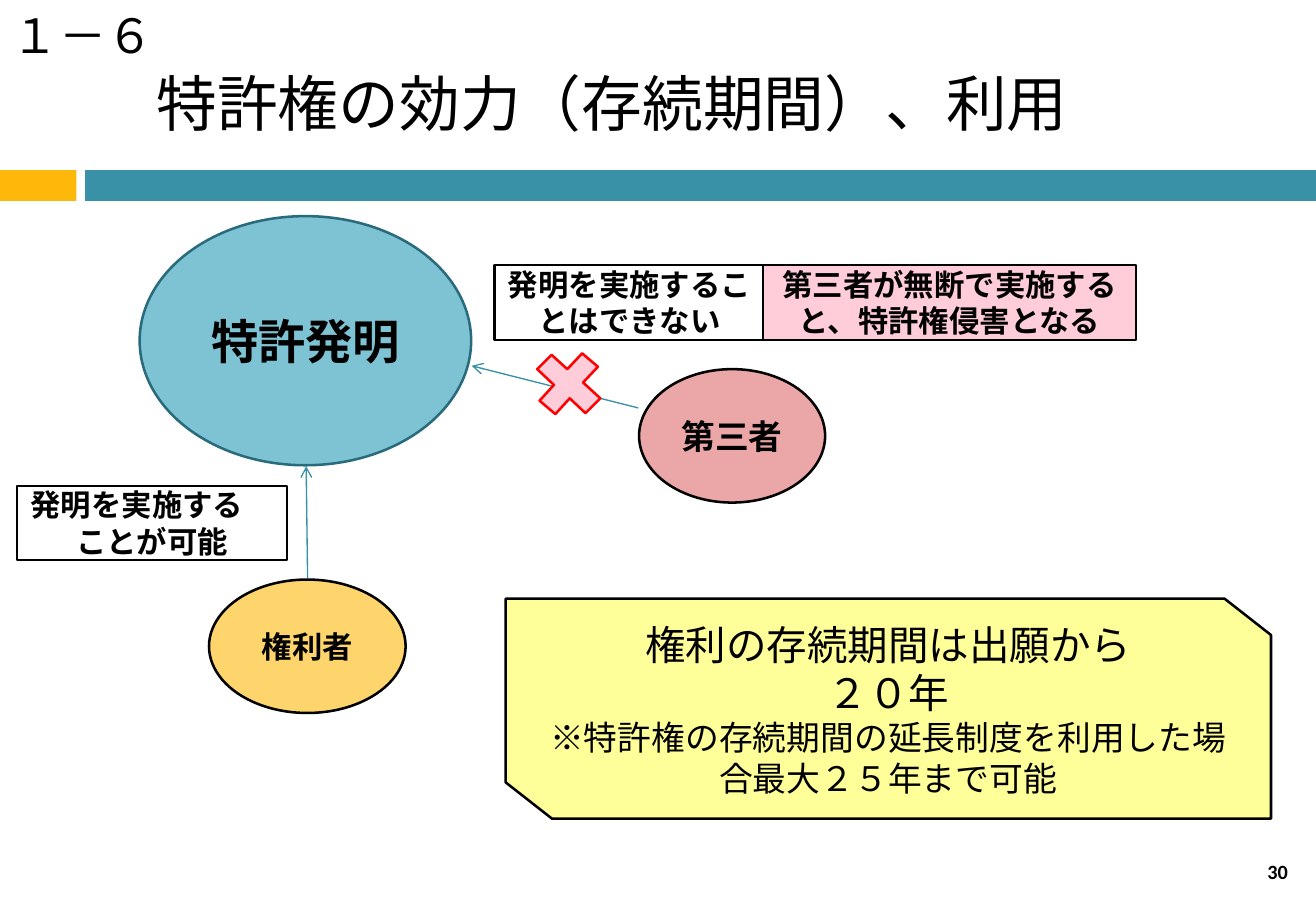
from dataclasses import dataclass

from lxml.etree import SubElement
from pptx import Presentation
from pptx.dml.color import RGBColor
from pptx.enum.lang import MSO_LANGUAGE_ID
from pptx.enum.shapes import MSO_CONNECTOR, MSO_SHAPE
from pptx.enum.text import MSO_ANCHOR, MSO_AUTO_SIZE, PP_ALIGN
from pptx.oxml.ns import qn
from pptx.util import Cm, Pt


@dataclass(frozen=True)
class Theme:
    # Colours
    black: str = "000000"
    white: str = "FFFFFF"
    amber: str = "FEB80A"
    teal: str = "3891A7"
    dark_teal: str = "296B7C"
    light_teal: str = "7EC3D4"
    gold: str = "FED46C"
    rose: str = "EBA7A8"
    pink: str = "FFCDD9"
    red: str = "FF0000"
    yellow: str = "FFFF99"
    # Fonts
    heading_font: str = "Noto Sans CJK JP"
    label_font: str = "Calibri"
    body_font: str = "Cabin"
    # Type sizes and line widths in points
    title: int = 36
    large: int = 28
    lead: int = 24
    medium: int = 20
    small: int = 18
    number: int = 12
    outline: float = 1.5
    arrow: float = 0.79


class SlideBuilder:
    def __init__(self, slide, theme):
        self.slide = slide
        self.theme = theme

    def set_text(self, shape, lines, font, bold=False, align=PP_ALIGN.CENTER,
                 anchor=MSO_ANCHOR.MIDDLE, margin=0.25):
        """Fill a shape with (text, size) lines, one paragraph each."""
        frame = shape.text_frame
        frame.word_wrap = True
        frame.auto_size = MSO_AUTO_SIZE.NONE
        frame.vertical_anchor = anchor
        frame.margin_left = frame.margin_right = Cm(margin)
        for index, (text, size) in enumerate(lines):
            paragraph = frame.add_paragraph() if index else frame.paragraphs[0]
            paragraph.text = text
            paragraph.alignment = align
            paragraph.font.name = font
            paragraph.font.size = Pt(size)
            paragraph.font.bold = bold
            paragraph.font.color.rgb = RGBColor.from_string(self.theme.black)
            paragraph.font.language_id = MSO_LANGUAGE_ID.JAPANESE

    def paint(self, shape, fill, line=None):
        shape.shadow.inherit = False
        shape.fill.solid()
        shape.fill.fore_color.rgb = RGBColor.from_string(fill)
        if line:
            shape.line.color.rgb = RGBColor.from_string(line)
            shape.line.width = Pt(self.theme.outline)
        else:
            shape.line.fill.background()
        return shape

    def title(self, text, left, top, width, height):
        shape = self.slide.shapes.title
        shape.left, shape.top = Cm(left), Cm(top)
        shape.width, shape.height = Cm(width), Cm(height)
        self.set_text(shape, [(text, self.theme.title)], self.theme.heading_font,
                      align=PP_ALIGN.LEFT)

    def shape(self, kind, box, fill, line=None):
        shape = self.slide.shapes.add_shape(kind, *map(Cm, box))
        return self.paint(shape, fill, line)

    def labelled(self, kind, box, fill, text, size, font, line=None):
        shape = self.shape(kind, box, fill, line or self.theme.black)
        self.set_text(shape, [(text, size)], font, bold=True)

    def outline(self, points, fill, line):
        corners = [(Cm(x), Cm(y)) for x, y in points]
        builder = self.slide.shapes.build_freeform(*corners[0])
        builder.add_line_segments(corners[1:], close=True)
        return self.paint(builder.convert_to_shape(), fill, line)

    def text_box(self, box, text, size, font, **style):
        shape = self.slide.shapes.add_textbox(*map(Cm, box))
        self.set_text(shape, [(text, size)], font, **style)
        return shape

    def arrow(self, start, end):
        connector = self.slide.shapes.add_connector(
            MSO_CONNECTOR.STRAIGHT, *map(Cm, start + end))
        connector.line.color.rgb = RGBColor.from_string(self.theme.teal)
        connector.line.width = Pt(self.theme.arrow)
        properties = connector._element.spPr
        SubElement(properties.find(qn("a:ln")), qn("a:tailEnd"), type="arrow")
        SubElement(properties, qn("a:effectLst"))


def main():
    theme = Theme()
    presentation = Presentation()
    presentation.slide_width, presentation.slide_height = Cm(27.51), Cm(19.05)
    slide = presentation.slides.add_slide(presentation.slide_layouts[5])
    builder = SlideBuilder(slide, theme)
    rectangle, oval = MSO_SHAPE.RECTANGLE, MSO_SHAPE.OVAL

    # Heading and colour band
    builder.shape(rectangle, (0, 3.56, 1.6, 0.64), theme.amber)
    builder.shape(rectangle, (1.78, 3.56, 25.73, 0.64), theme.teal)
    builder.title("　特許権の効力（存続期間）、利用", 1.75, 0.76, 25.76, 2.74)
    builder.text_box((0, 0, 4.55, 1.45), "１－６", theme.large, theme.heading_font,
                     align=PP_ALIGN.LEFT, anchor=MSO_ANCHOR.TOP)

    # Invention, right holder and third party
    builder.labelled(oval, (2.92, 4.52, 6.93, 5.21), theme.light_teal, "特許発明",
                     theme.large, theme.label_font, theme.dark_teal)
    builder.labelled(oval, (4.37, 12.12, 4.11, 2.79), theme.gold, "権利者",
                     theme.small, theme.body_font)
    builder.labelled(oval, (13.36, 7.72, 3.89, 2.79), theme.rose, "第三者",
                     theme.medium, theme.body_font)
    builder.arrow((6.43, 12.09), (6.4, 9.75))
    builder.arrow((13.34, 8.53), (9.86, 7.65))

    # Cross that blocks the third party
    builder.outline([(11.53, 7.42), (11.86, 7.72), (12.17, 7.39), (12.5, 7.67),
                     (12.19, 8), (12.55, 8.33), (12.24, 8.64), (11.91, 8.33),
                     (11.61, 8.66), (11.28, 8.38), (11.58, 8.05), (11.23, 7.72)],
                    theme.pink, theme.red)

    # Explanations beside the arrows
    for box, fill, text, font in [
        ((0.36, 10.16, 5.64, 1.55), theme.white,
         "発明を実施する　ことが可能", theme.label_font),
        ((10.34, 5.54, 5.64, 1.57), theme.white,
         "発明を実施することはできない", theme.label_font),
        ((15.95, 5.54, 7.8, 1.57), theme.pink,
         "第三者が無断で実施すると、特許権侵害となる", theme.body_font),
    ]:
        builder.labelled(rectangle, box, fill, text, theme.small, font)

    # Term of the right, in a box with two cut corners
    left, top, right, bottom = 10.57, 12.52, 26.57, 17.12
    cut_x, cut_y = 0.97, 0.76
    term = builder.outline([(left, top), (right - cut_x, top), (right, top + cut_y),
                            (right, bottom), (left + cut_x, bottom),
                            (left, bottom - cut_y)], theme.yellow, theme.black)
    builder.set_text(term, [
        ("権利の存続期間は出願から", theme.lead),
        ("２０年", theme.lead),
        ("※特許権の存続期間の延長制度を利用した場合最大２５年まで可能", theme.medium),
    ], theme.body_font, margin=0.74)

    # Page number
    number = builder.text_box((25.91, 17.93, 1.6, 0.69), "30", theme.number,
                              theme.label_font, bold=True)
    number.text_frame.paragraphs[0].line_spacing = 0.8

    presentation.save("out.pptx")


if __name__ == "__main__":
    main()
